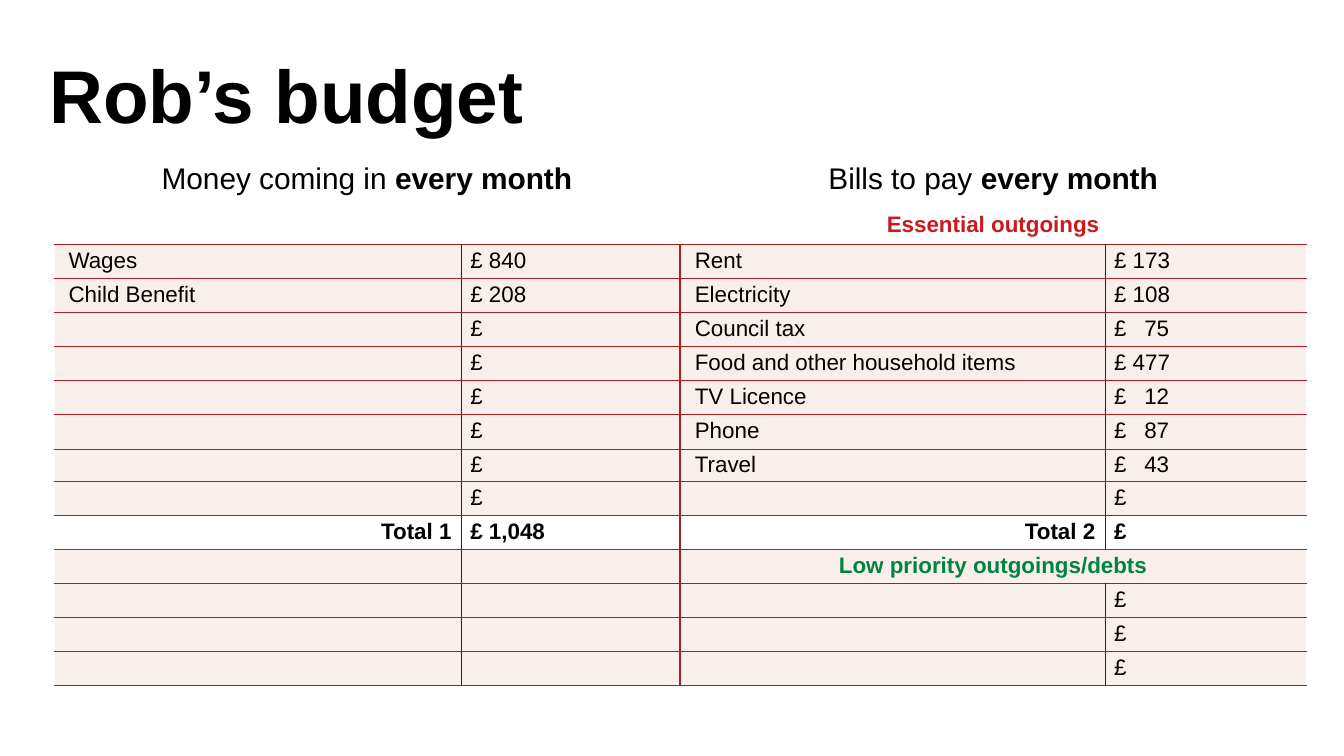
from dataclasses import dataclass

from lxml import etree
from pptx import Presentation, util as u
from pptx.dml.color import RGBColor
from pptx.enum import text
from pptx.oxml.ns import qn


@dataclass(frozen=True)
class Theme:
    font: str = "Arial"
    ink: str = "000000"
    paper: str = "FFFFFF"
    tint: str = "F9EFEA"
    rule: str = "AB1D1F"
    divider: str = "800000"
    essential: str = "CC191D"
    low_priority: str = "00853F"
    title: int = 40
    heading: int = 16
    body: int = 12


@dataclass(frozen=True)
class Entry:
    """Words of one cell; bold_part is a second run in bold."""
    words: str = ""
    bold_part: str = ""
    size: int = Theme.body
    color: str = Theme.ink
    bold: bool = False
    align: text.PP_ALIGN = text.PP_ALIGN.LEFT
    span: int = 1
    inset: float = 0.07


CENTER, RIGHT = text.PP_ALIGN.CENTER, text.PP_ALIGN.RIGHT
AMOUNT_TAB = 0.41


class BudgetSlide:
    def __init__(self, deck, theme):
        self.theme = theme
        self.slide = deck.slides.add_slide(deck.slide_layouts[6])

    def add_run(self, paragraph, words, size, color, bold):
        run = paragraph.add_run()
        run.text = words
        run.font.name = self.theme.font
        run.font.size = u.Pt(size)
        run.font.bold = bold
        run.font.color.rgb = RGBColor.from_string(color)

    def add_title(self, words, left, top, width, height):
        box = self.slide.shapes.add_textbox(*map(u.Inches, (left, top, width, height)))
        frame = box.text_frame
        frame.word_wrap = True
        frame.margin_bottom = u.Inches(0.02)
        frame.vertical_anchor = text.MSO_ANCHOR.BOTTOM
        paragraph = frame.paragraphs[0]
        paragraph.line_spacing = u.Pt(54)
        self.add_run(paragraph, words, self.theme.title, self.theme.ink, True)

    def add_budget(self, entries, left, top, columns, heights):
        """Two header rows come first; a None entry is covered by a span."""
        frame = self.slide.shapes.add_table(
            len(entries), len(columns),
            *map(u.Inches, (left, top, sum(columns), sum(heights))))
        table = frame.table
        table.first_row = table.horz_banding = False
        for column, width in zip(table.columns, columns):
            column.width = u.Inches(width)
        for row, height in zip(table.rows, heights):
            row.height = u.Inches(height)
        for r, line in enumerate(entries):
            is_total = any(entry and entry.words.startswith("Total") for entry in line)
            fill = self.theme.paper if r < 2 or is_total else self.theme.tint
            for c, entry in enumerate(line):
                if entry is None:
                    continue
                cell = table.cell(r, c)
                if entry.span > 1:
                    cell.merge(table.cell(r, c + entry.span - 1))
                self.fill_cell(cell, entry, fill)
                self.rule_cell(cell, r, c, c + entry.span)

    def fill_cell(self, cell, entry, fill):
        cell.fill.solid()
        cell.fill.fore_color.rgb = RGBColor.from_string(fill)
        cell.margin_left, cell.margin_right = u.Inches(entry.inset), u.Inches(0.07)
        cell.margin_top = cell.margin_bottom = 0
        paragraph = cell.text_frame.paragraphs[0]
        paragraph.alignment = entry.align
        paragraph.line_spacing = 1.15
        if "\t" in entry.words:
            tabs = etree.SubElement(paragraph._p.get_or_add_pPr(), qn("a:tabLst"))
            etree.SubElement(tabs, qn("a:tab"), pos=str(u.Inches(AMOUNT_TAB)), algn="r")
        if entry.words:
            self.add_run(paragraph, entry.words, entry.size, entry.color, entry.bold)
        else:
            paragraph._p.get_or_add_endParaRPr().set("sz", str(entry.size * 100))
        if entry.bold_part:
            self.add_run(paragraph, entry.bold_part, entry.size, entry.color, True)

    def rule_cell(self, cell, row, first, last):
        """Rule a cell that lies between the column edges first and last."""
        t = self.theme
        white, thin, thick = (t.paper, 0.25), (t.rule, 0.25), (t.rule, 0.75)
        divider = (t.divider, 0.25)
        edges = [white] * 5 if row < 2 else [white, divider, thick, divider, white]
        above = white if row < 2 else thick if row == 2 else thin
        below = white if row == 0 else thick if row == 1 else thin
        sides = {"lnL": edges[first], "lnR": edges[last], "lnT": above, "lnB": below}
        properties = cell._tc.get_or_add_tcPr()
        for position, (side, (color, width)) in enumerate(sides.items()):
            line = etree.Element(qn(f"a:{side}"), w=str(u.Pt(width)))
            solid = etree.SubElement(line, qn("a:solidFill"))
            etree.SubElement(solid, qn("a:srgbClr"), val=color)
            properties.insert(position, line)


def label(words=""):
    return Entry(words, inset=0.11)


def total(words, align=text.PP_ALIGN.LEFT):
    return Entry(words, bold=True, align=align)


def heading(words):
    return Entry(words, "every month", size=Theme.heading, align=CENTER, span=2)


def section(words, color):
    return Entry(words, color=color, bold=True, align=CENTER, span=2)


def budget_entries(theme):
    income = [("Wages", "£ 840"), ("Child Benefit", "£ 208")] + [("", "£")] * 6
    bills = [("Rent", "£ 173"), ("Electricity", "£ 108"), ("Council tax", "£\t75"),
             ("Food and other household items", "£ 477"), ("TV Licence", "£\t12"),
             ("Phone", "£\t87"), ("Travel", "£\t43"), ("", "£")]
    blank = Entry()
    return [
        [heading("Money coming in "), None, heading("Bills to pay "), None],
        [blank, blank, section("Essential outgoings", theme.essential), None],
        *([label(source), Entry(earned), label(bill), Entry(cost)]
          for (source, earned), (bill, cost) in zip(income, bills)),
        [total("Total 1", RIGHT), total("£ 1,048"), total("Total 2", RIGHT), total("£")],
        [blank, blank, section("Low priority outgoings/debts", theme.low_priority), None],
        *([blank, blank, blank, Entry("£")] for _ in range(3)),
    ]


def main():
    deck = Presentation()
    deck.slide_width = u.Inches(10)
    deck.slide_height = deck.slide_width * 9 // 16
    theme = Theme()
    budget = BudgetSlide(deck, theme)
    budget.add_title("Rob’s budget", 0.27, 0.24, 7.17, 0.81)

    entries = budget_entries(theme)
    table_height = 3.93
    special_heights = {0: 0.38, 1: 0.27, 8: 0.24}
    regular = ((table_height - sum(special_heights.values()))
               / (len(entries) - len(special_heights)))
    heights = [special_heights.get(row, regular) for row in range(len(entries))]
    budget.add_budget(entries, 0.4, 1.17, [3.03, 1.63, 3.16, 1.5], heights)
    deck.save("out.pptx")


if __name__ == "__main__":
    main()
